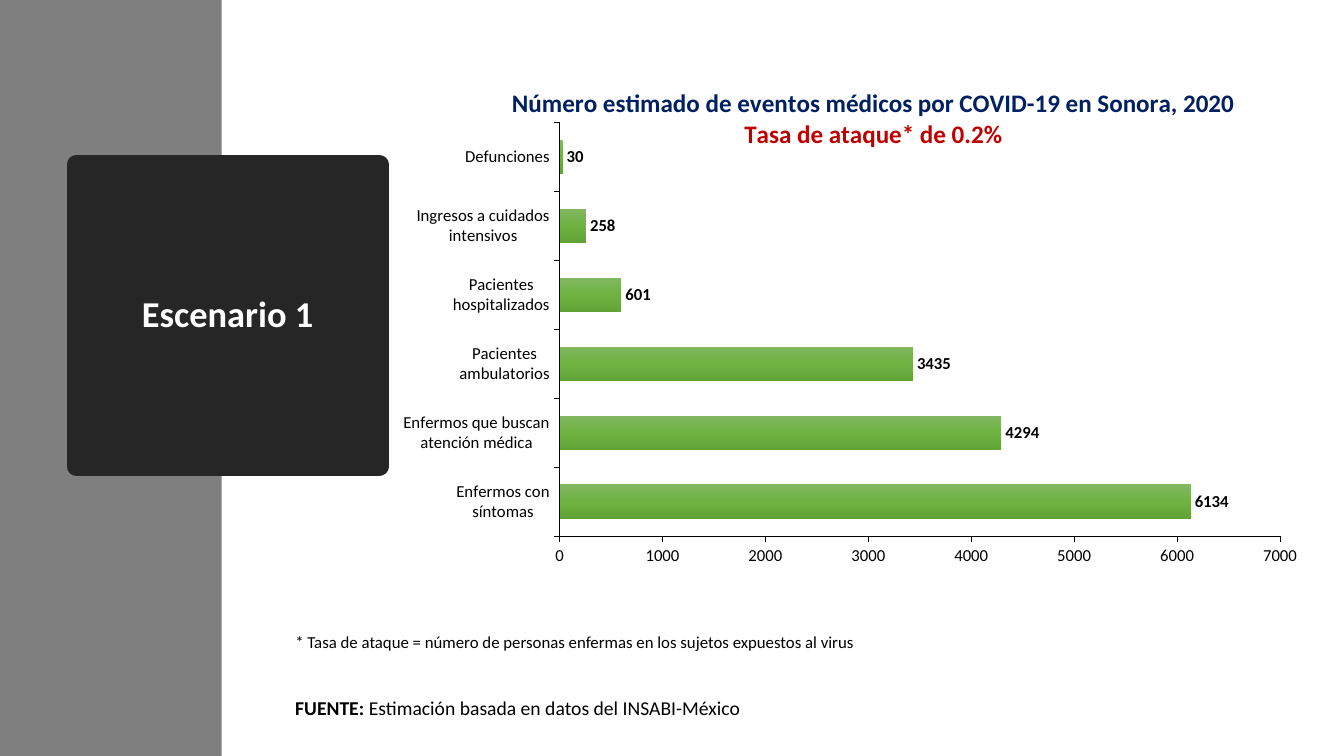
"""Build the slide with estimated COVID-19 medical events in Sonora, scenario 1."""
from pptx import Presentation
from pptx.chart.data import CategoryChartData
from pptx.dml.color import RGBColor
from pptx.enum.chart import XL_CHART_TYPE, XL_LABEL_POSITION, XL_TICK_MARK
from pptx.enum.shapes import MSO_SHAPE
from pptx.enum.text import MSO_ANCHOR, PP_ALIGN
from pptx.oxml import parse_xml
from pptx.oxml.ns import nsdecls
from pptx.util import Inches, Pt

BAR_CLUSTERED = XL_CHART_TYPE.BAR_CLUSTERED
OUTSIDE_END = XL_LABEL_POSITION.OUTSIDE_END
TICK_OUTSIDE = XL_TICK_MARK.OUTSIDE
TICK_NONE = XL_TICK_MARK.NONE
RECTANGLE = MSO_SHAPE.RECTANGLE
MIDDLE = MSO_ANCHOR.MIDDLE
CENTER = PP_ALIGN.CENTER

FONT = "Calibri"
WHITE = RGBColor(0xFF, 0xFF, 0xFF)
BLACK = RGBColor(0x00, 0x00, 0x00)
GRAY = RGBColor(0x7F, 0x7F, 0x7F)
CHARCOAL = RGBColor(0x26, 0x26, 0x26)
NAVY = RGBColor(0x00, 0x20, 0x60)
RED = RGBColor(0xC0, 0x00, 0x00)
BAR_GRADIENT = [(0, "81B861"), (50, "6FB242"), (100, "62A336")]


def style_font(font, size, color, bold=False):
    font.name = FONT
    font.size = Pt(size)
    font.bold = bold
    font.color.rgb = color


def manual_layout(target, **position):
    values = "".join(f'<c:{key} val="{value}"/>' for key, value in position.items())
    return parse_xml(f'<c:layout {nsdecls("c")}><c:manualLayout>{target}'
                     f'<c:xMode val="edge"/><c:yMode val="edge"/>{values}'
                     '</c:manualLayout></c:layout>')


presentation = Presentation()
presentation.slide_width = Inches(13.33)
presentation.slide_height = Inches(7.5)
slide = presentation.slides.add_slide(presentation.slide_layouts[6])

side_band = slide.shapes.add_shape(RECTANGLE, 0, 0, Inches(2.2), Inches(7.5))
side_band.fill.solid()
side_band.fill.fore_color.rgb = GRAY
side_band.line.fill.background()
side_band.shadow.inherit = False

scenario = slide.shapes.add_shape(RECTANGLE, Inches(0.76), Inches(1.63), Inches(3), Inches(3))
scenario.fill.solid()
scenario.fill.fore_color.rgb = CHARCOAL
scenario.line.color.rgb = CHARCOAL
scenario.line.width = Pt(13.75)
scenario.shadow.inherit = False
scenario.text_frame.text = "Escenario 1"
scenario.text_frame.vertical_anchor = MIDDLE
paragraph = scenario.text_frame.paragraphs[0]
paragraph.alignment = CENTER
paragraph.line_spacing = 0.9
style_font(paragraph.runs[0].font, 26, WHITE, True)

notes = [
    (6.24, 8.78, 0.43, 12,
     [("* Tasa de ataque = número de personas enfermas en los sujetos expuestos al virus", False)]),
    (6.88, 4.63, 0.31, 14,
     [("FUENTE: ", True), ("Estimación basada en datos del INSABI-México", False)]),
]
for top, width, height, size, parts in notes:
    note = slide.shapes.add_textbox(Inches(2.83), Inches(top), Inches(width), Inches(height))
    note.text_frame.word_wrap = True
    paragraph = note.text_frame.paragraphs[0]
    paragraph.line_spacing = 0.9
    for text, bold in parts:
        run = paragraph.add_run()
        run.text = text
        style_font(run.font, size, BLACK, bold)

chart_data = CategoryChartData()
chart_data.categories = [
    "Enfermos con síntomas", "Enfermos que buscan atención médica",
    "Pacientes ambulatorios", "Pacientes hospitalizados",
    "Ingresos a cuidados intensivos", "Defunciones",
]
chart_data.add_series("Series 1", [6134, 4294, 3435, 601, 258, 30])
chart = slide.shapes.add_chart(BAR_CLUSTERED, Inches(4), Inches(0.61), Inches(9.19),
                               Inches(5.42), chart_data).chart
style_font(chart.font, 10, BLACK)
chart.has_legend = False

title = chart.chart_title
title.include_in_layout = False
title.text_frame.text = "Número estimado de eventos médicos por COVID-19 en Sonora, 2020"
title.text_frame.add_paragraph().text = "Tasa de ataque* de 0.2%"
for paragraph, color in zip(title.text_frame.paragraphs, [NAVY, RED]):
    paragraph.alignment = CENTER
    style_font(paragraph.font, 18, color, True)
    style_font(paragraph.runs[0].font, 18, color, True)
title_element = chart.chart_title._element
for layout in title_element.findall("{*}layout"):
    title_element.remove(layout)
title_element.find("{*}tx").addnext(manual_layout("", x=0.11, y=0.04))

plot_area = chart.plots[0]._element.getparent()
for layout in plot_area.findall("{*}layout"):
    plot_area.remove(layout)
plot_area.insert(0, manual_layout('<c:layoutTarget val="inner"/>',
                                  x=0.165, y=0.112, w=0.781, h=0.757))

for axis in (chart.category_axis, chart.value_axis):
    axis.has_major_gridlines = False
    axis.major_tick_mark = TICK_OUTSIDE
    axis.minor_tick_mark = TICK_NONE
    axis.format.line.color.rgb = BLACK
    axis.format.line.width = Pt(0.5)
    style_font(axis.tick_labels.font, 12, BLACK)
chart.value_axis.minimum_scale = 0
chart.value_axis.maximum_scale = 7000
chart.value_axis.major_unit = 1000

plot = chart.plots[0]
plot.gap_width = 100
plot.vary_by_categories = False
series = plot.series[0]
series.invert_if_negative = False
stops = "".join(f'<a:gs pos="{position * 1000}"><a:srgbClr val="{color}"/></a:gs>'
                for position, color in BAR_GRADIENT)
series.format.fill.background()
bar_properties = series._element.find("{*}spPr")
bar_properties.replace(bar_properties[0], parse_xml(
    f'<a:gradFill {nsdecls("a")}><a:gsLst>{stops}</a:gsLst>'
    '<a:lin ang="5400000" scaled="0"/></a:gradFill>'))
labels = series.data_labels
labels.show_value = True
labels.position = OUTSIDE_END
style_font(labels.font, 12, BLACK, True)

presentation.save("out.pptx")
